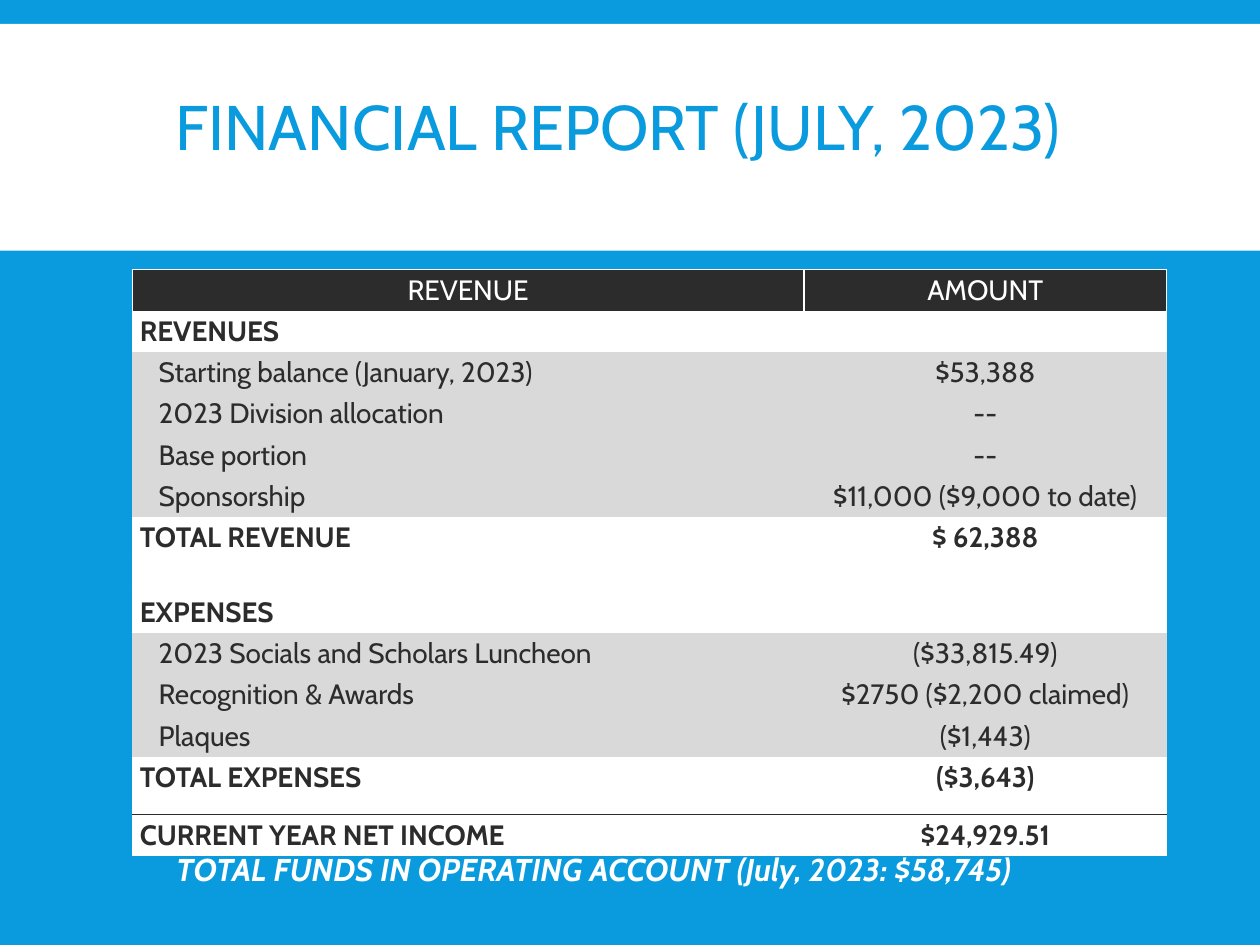
from lxml import etree
from pptx import Presentation
from pptx.dml.color import RGBColor
from pptx.enum.shapes import MSO_SHAPE
from pptx.enum.text import MSO_ANCHOR, PP_ALIGN
from pptx.oxml.ns import qn
from pptx.util import Inches, Pt

COLORS = {"blue": "099BDD", "white": "FFFFFF", "dark": "2C2C2C", "gray": "D9D9D9"}
NO_TABLE_STYLE = "{2D5ABB26-0587-4C30-8999-92F81FD0307C}"

# Row kind: fill, text colour, bold, left margin, borders by side
ROW_STYLES = {
    "header": ("dark", "white", False, 0.06, {"L": "white", "R": "white", "T": "white"}),
    "section": ("white", "dark", True, 0.06, {}),
    "item": ("gray", "dark", False, 0.21, {}),
    "total": ("white", "dark", True, 0.06, {"L": "white", "R": "white", "B": "white"}),
    "closing": ("white", "dark", True, 0.06, {"L": "white", "R": "white", "B": "dark"}),
    "net": ("white", "dark", True, 0.06, {"L": "white", "R": "white", "T": "dark"}),
}
ROW_HEIGHT = 0.32
SPECIAL_HEIGHTS = {7: 0.27, 12: 0.46}
REPORT_ROWS = [
    ("header", "REVENUE", "AMOUNT"),
    ("section", "REVENUES", ""),
    ("item", "Starting balance (January, 2023)", "$53,388"),
    ("item", "2023 Division allocation", "--"),
    ("item", "Base portion", "--"),
    ("item", "Sponsorship", "$11,000 ($9,000 to date)"),
    ("total", "TOTAL REVENUE", "$ 62,388"),
    ("total", "", ""),
    ("section", "EXPENSES", ""),
    ("item", "2023 Socials and Scholars Luncheon", "($33,815.49)"),
    ("item", "Recognition & Awards", "$2750 ($2,200 claimed)"),
    ("item", "Plaques", "($1,443)"),
    ("closing", "TOTAL EXPENSES", "($3,643)"),
    ("net", "CURRENT YEAR NET INCOME", "$24,929.51"),
]


def rgb(name):
    return RGBColor.from_string(COLORS[name])


class SlideBuilder:
    def __init__(self, slide, font_name):
        self.slide = slide
        self.font_name = font_name

    def background(self, color):
        fill = self.slide.background.fill
        fill.solid()
        fill.fore_color.rgb = rgb(color)

    def band(self, left, top, width, height, color):
        shape = self.slide.shapes.add_shape(
            MSO_SHAPE.RECTANGLE, Inches(left), Inches(top), Inches(width), Inches(height))
        shape.shadow.inherit = False
        shape.fill.solid()
        shape.fill.fore_color.rgb = rgb(color)
        shape.line.fill.background()

    def format_runs(self, paragraph, size, color, bold=False, italic=False):
        for run in paragraph.runs:
            font = run.font
            font.name, font.size = self.font_name, Pt(size)
            font.bold, font.italic = bold, italic
            font.color.rgb = rgb(color)

    def text(self, left, top, width, height, text, size, color,
             align=PP_ALIGN.LEFT, anchor=MSO_ANCHOR.TOP, line_spacing=1.0, **emphasis):
        box = self.slide.shapes.add_textbox(
            Inches(left), Inches(top), Inches(width), Inches(height))
        frame = box.text_frame
        frame.word_wrap = True
        frame.vertical_anchor = anchor
        frame.text = text
        paragraph = frame.paragraphs[0]
        paragraph.alignment = align
        paragraph.line_spacing = line_spacing
        self.format_runs(paragraph, size, color, **emphasis)

    def border(self, cell, side, color):
        properties = cell._tc.get_or_add_tcPr()
        line = etree.SubElement(properties, qn(f"a:ln{side}"), w=str(Pt(1)))
        fill = etree.SubElement(line, qn("a:solidFill"))
        etree.SubElement(fill, qn("a:srgbClr"), val=COLORS[color])

    def cell(self, cell, text, kind, align):
        fill, color, bold, margin, borders = ROW_STYLES[kind]
        cell.margin_left = Inches(margin if align == PP_ALIGN.LEFT else 0.06)
        cell.margin_right = Inches(0.06)
        cell.margin_top = cell.margin_bottom = Inches(0.03)
        for side, border_color in borders.items():
            self.border(cell, side, border_color)
        cell.fill.solid()
        cell.fill.fore_color.rgb = rgb(fill)
        paragraph = cell.text_frame.paragraphs[0]
        paragraph.alignment = align
        if text:
            paragraph.text = text
            self.format_runs(paragraph, 16, color, bold)
        else:
            # A small end mark keeps an empty cell from stretching its row
            etree.SubElement(paragraph._p, qn("a:endParaRPr"), sz="1000")

    def table(self, left, top, column_widths, rows):
        heights = [SPECIAL_HEIGHTS.get(i, ROW_HEIGHT) for i in range(len(rows))]
        frame = self.slide.shapes.add_table(
            len(rows), len(column_widths), Inches(left), Inches(top),
            Inches(sum(column_widths)), Inches(sum(heights)))
        table = frame.table
        table.horz_banding = False
        table._tbl.tblPr.find(qn("a:tableStyleId")).text = NO_TABLE_STYLE
        for column, width in zip(table.columns, column_widths):
            column.width = Inches(width)
        for row, height, (kind, label, amount) in zip(table.rows, heights, rows):
            row.height = Inches(height)
            label_align = PP_ALIGN.CENTER if kind == "header" else PP_ALIGN.LEFT
            self.cell(row.cells[0], label, kind, label_align)
            self.cell(row.cells[1], amount, kind, PP_ALIGN.CENTER)


def main():
    presentation = Presentation()
    presentation.slide_width, presentation.slide_height = Inches(10), Inches(7.5)
    slide = presentation.slides.add_slide(presentation.slide_layouts[6])
    builder = SlideBuilder(slide, "Cabin")
    builder.background("blue")
    builder.band(0, 0.19, 10, 1.8, "white")
    builder.text(1.23, 0.82, 7.35, 0.44, "FINANCIAL REPORT (JULY, 2023)", 36, "blue",
                 align=PP_ALIGN.CENTER, anchor=MSO_ANCHOR.MIDDLE, line_spacing=0.85)
    builder.table(1.05, 2.14, [5.33, 2.88], REPORT_ROWS)
    builder.text(1.3, 6.7, 7.22, 0.71,
                 "TOTAL FUNDS IN OPERATING ACCOUNT (July, 2023: $58,745)",
                 18, "white", bold=True, italic=True)
    presentation.save("out.pptx")


if __name__ == "__main__":
    main()
